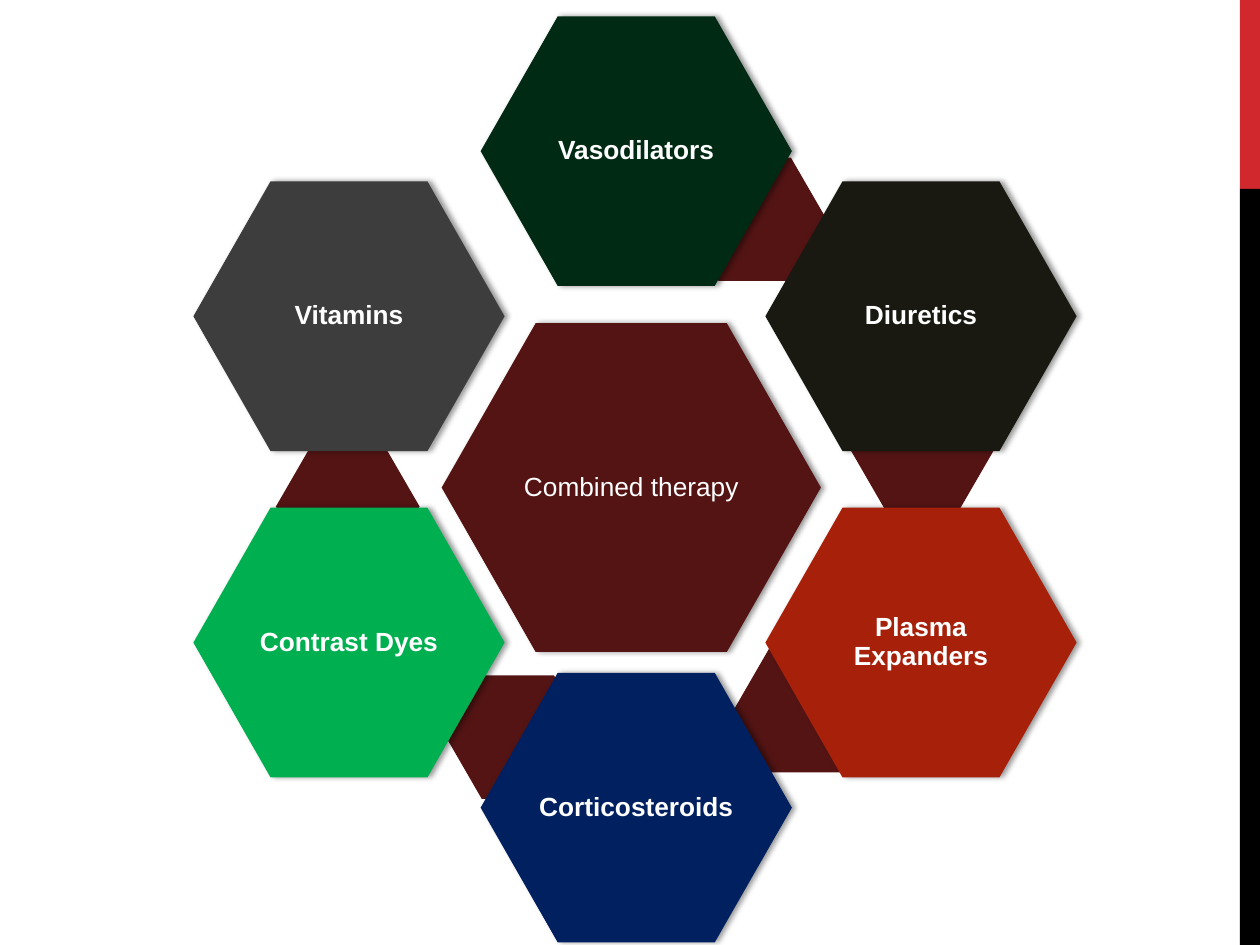
from lxml.etree import SubElement
from pptx import Presentation
from pptx.dml.color import RGBColor
from pptx.enum.shapes import MSO_SHAPE
from pptx.enum.text import MSO_ANCHOR, PP_ALIGN
from pptx.oxml.ns import qn
from pptx.util import Inches, Pt

WHITE = RGBColor(0xFF, 0xFF, 0xFF)
BLACK = RGBColor(0x00, 0x00, 0x00)
RED = RGBColor(0xD1, 0x28, 0x2E)
MAROON = RGBColor(0x54, 0x14, 0x14)
DARK_GREEN = RGBColor(0x00, 0x2A, 0x13)
OLIVE = RGBColor(0x19, 0x19, 0x11)
RUST = RGBColor(0xA6, 0x20, 0x0A)
NAVY = RGBColor(0x00, 0x20, 0x60)
GREEN = RGBColor(0x00, 0xB0, 0x50)
GREY = RGBColor(0x3D, 0x3D, 0x3D)

FRAME = {"word_wrap": True, "vertical_anchor": MSO_ANCHOR.MIDDLE,
         **{f"margin_{side}": Inches(0.02) for side in ("left", "top", "right", "bottom")}}
PARAGRAPH = {"alignment": PP_ALIGN.CENTER, "line_spacing": 0.9}
FONT = {"name": "Arial", "size": Pt(15)}

# Centre lines of the ring of hexagons, in inches
COLS = (2.77, 5.05, 7.31)
ROWS = (1.2, 2.51, 5.1, 6.41)
CORE_SIZE = (3.01, 2.61)
THERAPY_SIZE = (2.47, 2.14)
LINK_SIZE = (1.14, 0.98)

prs = Presentation()
prs.slide_width, prs.slide_height = Inches(10), Inches(7.5)
s = prs.slides.add_slide(prs.slide_layouts[6])


def add_block(kind, center, size, color):
    """Add a plain filled shape placed by its centre."""
    (x, y), (w, h) = center, size
    sp = s.shapes.add_shape(kind, Inches(x - w / 2), Inches(y - h / 2), Inches(w), Inches(h))
    sp.shadow.inherit = False
    sp.fill.solid()
    sp.fill.fore_color.rgb = color
    sp.line.fill.background()
    return sp


def add_label_hexagon(text, center, size, color, bold):
    """Add a hexagon with a centred label and a soft shadow to the right."""
    sp = add_block(MSO_SHAPE.HEXAGON, center, size, color)
    sp.adjustments[0] = 0.286
    effects = sp._element.spPr.find(qn("a:effectLst"))
    shadow = SubElement(effects, qn("a:outerShdw"), blurRad=str(Pt(3.1)),
                        dist=str(Pt(1.8)), dir="0", algn="ctr", rotWithShape="0")
    shade = SubElement(shadow, qn("a:srgbClr"), val=str(BLACK))
    SubElement(shade, qn("a:alpha"), val="40000")

    tf = sp.text_frame
    p = tf.paragraphs[0]
    r = p.add_run()
    r.text = text
    for target, values in ((tf, FRAME), (p, PARAGRAPH), (r.font, FONT)):
        for name, value in values.items():
            setattr(target, name, value)
    r.font.bold = bold
    r.font.color.rgb = WHITE


# Side bar
add_block(MSO_SHAPE.RECTANGLE, (9.92, 0.75), (0.16, 1.5), RED)
add_block(MSO_SHAPE.RECTANGLE, (9.92, 4.5), (0.16, 6), BLACK)

add_label_hexagon("Combined therapy", (5.01, 3.87), CORE_SIZE, MAROON, False)

# Clockwise from the top: label, column, row, colour, centre of the link behind it
therapies = [
    ("Vasodilators", 1, 0, DARK_GREEN, (5.99, 1.74)),
    ("Diuretics", 2, 1, OLIVE, (7.32, 3.57)),
    ("Plasma Expanders", 2, 2, RUST, (6.39, 5.64)),
    ("Corticosteroids", 1, 3, NAVY, (4.11, 5.85)),
    ("Contrast Dyes", 0, 2, GREEN, (2.76, 4.02)),
    ("Vitamins", 0, 1, GREY, None),
]
for label, col, row, color, link_center in therapies:
    if link_center:
        link = add_block(MSO_SHAPE.HEXAGON, link_center, LINK_SIZE, MAROON)
        link.adjustments[0] = 0.289
    add_label_hexagon(label, (COLS[col], ROWS[row]), THERAPY_SIZE, color, True)

prs.save("out.pptx")
